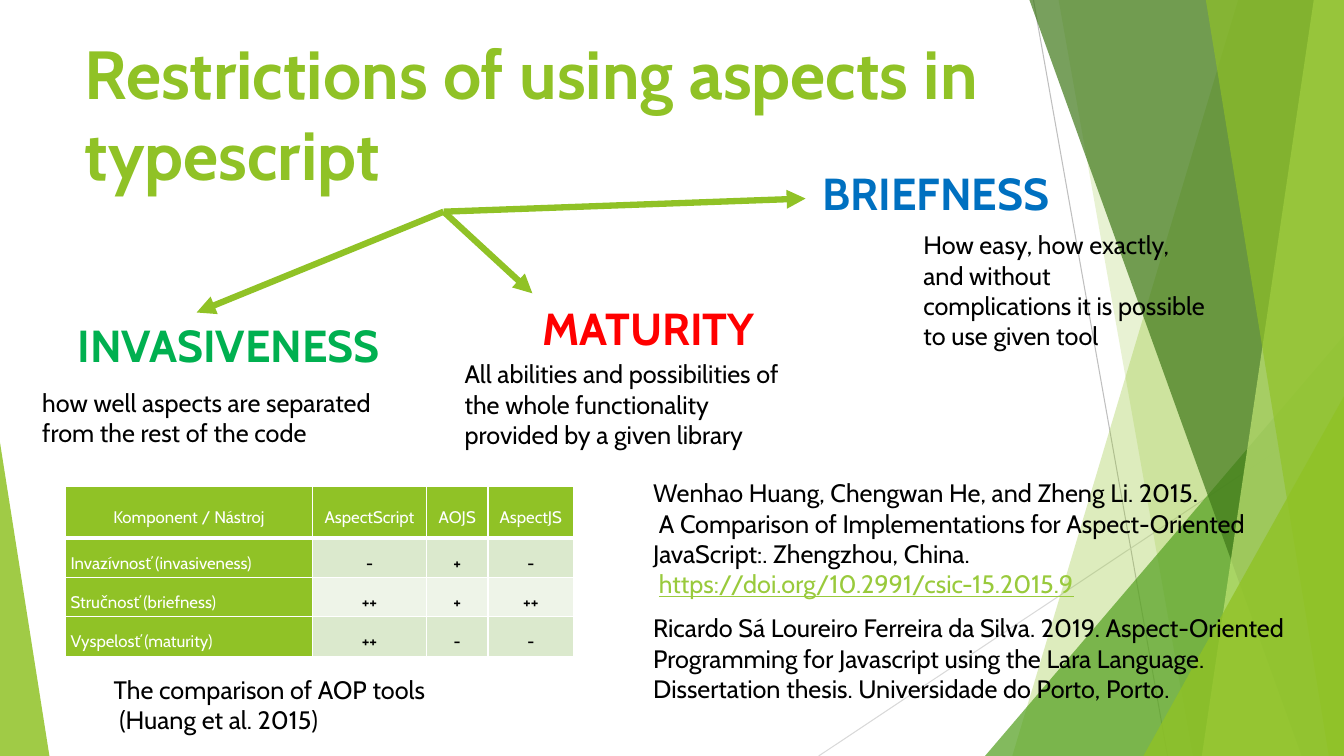
from lxml import etree
from pptx import Presentation
from pptx.dml.color import RGBColor
from pptx.enum.shapes import MSO_CONNECTOR, MSO_SHAPE
from pptx.enum.text import MSO_ANCHOR, MSO_AUTO_SIZE, PP_ALIGN
from pptx.oxml.ns import qn
from pptx.util import Inches, Pt

STRAIGHT = MSO_CONNECTOR.STRAIGHT
TRIANGLE = MSO_SHAPE.ISOSCELES_TRIANGLE
TOP, MIDDLE = MSO_ANCHOR.TOP, MSO_ANCHOR.MIDDLE
FIT_SHAPE, NO_FIT = MSO_AUTO_SIZE.SHAPE_TO_FIT_TEXT, MSO_AUTO_SIZE.NONE
LEFT, CENTER = PP_ALIGN.LEFT, PP_ALIGN.CENTER
FONT = "Cabin"
SLIDE_W, SLIDE_H = 13.33, 7.5
COLORS = {
    "lime": "90C226", "green": "54A021", "dark": "3F7819", "pale": "C0E474",
    "link": "99CA3C", "red": "FF0000", "emerald": "00B050", "blue": "0070C0",
    "black": "000000", "white": "FFFFFF", "gray": "BFBFBF", "silver": "D9D9D9",
    "band1": "DBE9CD", "band2": "EEF4E8",
}


def rgb(name):
    return RGBColor.from_string(COLORS[name])


def inches(*values):
    return [Inches(v) for v in values]


def add_run(p, text, size=18, color="black", bold=False, underline=False):
    r = p.add_run()
    r.text = text
    r.font.name, r.font.size = FONT, Pt(size)
    r.font.bold, r.font.underline = bold, underline
    r.font.color.rgb = rgb(color)


def write(tf, lines, align=LEFT, **fmt):
    """Put one paragraph per line into a text frame."""
    for i, line in enumerate(lines):
        p = tf.add_paragraph() if i else tf.paragraphs[0]
        p.alignment = align
        add_run(p, line, **fmt)


def add_text(shapes, box, lines, wrap=False, fit=FIT_SHAPE, **fmt):
    tf = shapes.add_textbox(*inches(*box)).text_frame
    write(tf, lines, **fmt)
    tf.word_wrap, tf.auto_size = wrap, fit
    return tf


def add_line(shapes, start, end, color, width, arrow=False):
    line = shapes.add_connector(STRAIGHT, *inches(*start, *end))
    line.line.color.rgb = rgb(color)
    line.line.width = Pt(width)
    if arrow:
        etree.SubElement(line.line._get_or_add_ln(), qn("a:tailEnd"), type="triangle")
    etree.SubElement(line._element.spPr, qn("a:effectLst"))


def paint(sp, color, opacity):
    sp.shadow.inherit = False
    sp.line.fill.background()
    sp.fill.solid()
    sp.fill.fore_color.rgb = rgb(color)
    clr = sp._element.spPr.find(qn("a:solidFill"))[0]
    etree.SubElement(clr, qn("a:alpha"), val=str(opacity * 1000))


def add_facet(shapes, top_x, bottom_x, color, opacity):
    """Fill the area from a slanted left edge to the right slide edge."""
    builder = shapes.build_freeform(*inches(top_x, 0))
    corners = [(SLIDE_W, 0), (SLIDE_W, SLIDE_H), (bottom_x, SLIDE_H)]
    builder.add_line_segments([inches(*c) for c in corners])
    paint(builder.convert_to_shape(), color, opacity)


def add_wedge(shapes, left, top, width, apex, color, opacity):
    """Triangle standing on the bottom slide edge, apex from 0 (left) to 1 (right)."""
    sp = shapes.add_shape(TRIANGLE, *inches(left, top, width, SLIDE_H - top))
    sp.adjustments[0] = apex
    paint(sp, color, opacity)


def add_decoration(shapes):
    add_line(shapes, (10.25, 0), (11.58, SLIDE_H), "gray", 0.75)
    add_line(shapes, (SLIDE_W, 4.03), (8.12, SLIDE_H), "silver", 0.75)
    add_facet(shapes, 12.28, 10.04, "lime", 30)
    add_facet(shapes, 10.5, 11.83, "lime", 20)
    add_wedge(shapes, 9.77, 3.33, 3.56, 1, "green", 72)
    add_facet(shapes, 10.21, 12.91, "dark", 70)
    add_facet(shapes, 13.03, 11.92, "pale", 70)
    add_facet(shapes, 11.96, 13.18, "lime", 65)
    add_wedge(shapes, 11.34, 3.93, 1.99, 1, "lime", 80)
    add_wedge(shapes, 0, 4.39, 0.49, 0, "lime", 85)


def set_borders(cell, bottom):
    tc_pr = cell._tc.get_or_add_tcPr()
    for side, width in (("L", 1), ("R", 1), ("T", 1), ("B", bottom)):
        ln = etree.SubElement(tc_pr, qn(f"a:ln{side}"), w=str(Pt(width)))
        fill = etree.SubElement(ln, qn("a:solidFill"))
        etree.SubElement(fill, qn("a:srgbClr"), val=COLORS["white"])


def add_comparison(shapes):
    rows = [
        ["Komponent / Nástroj", "AspectScript", "AOJS", "AspectJS"],
        ["Invazívnosť (invasiveness)", "-", "+", "-"],
        ["Stručnosť (briefness)", "++", "+", "++"],
        ["Vyspelosť (maturity)", "++", "-", "-"],
    ]
    table = shapes.add_table(4, 4, *inches(0.65, 4.83, 5.04, 1.68)).table
    for col, width in zip(table.columns, (2.45, 1.13, 0.61, 0.85)):
        col.width = Inches(width)
    for row, height in zip(table.rows, (0.51, 0.39, 0.39, 0.39)):
        row.height = Inches(height)
    for i, texts in enumerate(rows):
        for j, text in enumerate(texts):
            cell = table.cell(i, j)
            heading = i == 0 or j == 0
            set_borders(cell, 1 if i else 3)
            cell.fill.solid()
            cell.fill.fore_color.rgb = rgb("lime" if heading else "band1" if i % 2 else "band2")
            cell.vertical_anchor = MIDDLE
            cell.margin_left = cell.margin_right = Inches(0.05)
            cell.margin_top = cell.margin_bottom = 0
            write(cell.text_frame, [text], align=LEFT if i and not j else CENTER, size=12,
                  color="white" if heading else "black", bold=not heading)
            p = cell.text_frame.paragraphs[0]
            p.line_spacing, p.space_before = 1.5, Pt(3)


def add_title(slide):
    title = slide.shapes.title
    title.left, title.top, title.width, title.height = inches(0.74, 0.26, 9.4, 1.44)
    tf = title.text_frame
    write(tf, ["Restrictions of using aspects in typescript"], size=48.6, color="lime", bold=True)
    tf.word_wrap, tf.auto_size, tf.vertical_anchor = True, NO_FIT, TOP
    slide.shapes._spTree.append(title._element)


def main():
    prs = Presentation()
    prs.slide_width, prs.slide_height = inches(SLIDE_W, SLIDE_H)
    slide = prs.slides.add_slide(prs.slide_layouts[5])
    shapes = slide.shapes
    add_decoration(shapes.add_group_shape().shapes)
    add_title(slide)

    criteria = [
        ("MATURITY", "red", (5.28, 2.93, 3.21, 1.44), (5.28, 2.91), (4.51, 3.51, 3.74, 1.01),
         ["All abilities and possibilities of", "the whole functionality",
          "provided by a given library"]),
        ("INVASIVENESS", "emerald", (0.67, 3.1, 3.27, 1.44), (1.95, 3.1), (0.32, 3.79, 3.85, 0.71),
         ["how well aspects are separated", "from the rest of the code"]),
        ("BRIEFNESS", "blue", (8.06, 1.59, 3.96, 1.44), (7.99, 1.97), (9.06, 2.23, 3.31, 1.31),
         ["How easy, how exactly,", "and without", "complications it is possible",
          "to use given tool"]),
    ]
    for name, color, name_box, arrow_end, text_box, lines in criteria:
        add_text(shapes, name_box, [name], wrap=True, fit=NO_FIT, size=32, color=color, bold=True)
        add_line(shapes, (4.4, 2.1), arrow_end, "lime", 4.5, arrow=True)
        add_text(shapes, text_box, lines)

    add_text(shapes, (6.38, 6.03, 6.67, 1.01), [
        "Ricardo Sá Loureiro Ferreira da Silva. 2019. Aspect-Oriented Programming for Javascript "
        "using the Lara Language. Dissertation thesis. Universidade do Porto, Porto."], wrap=True)
    tf = add_text(shapes, (6.38, 4.69, 6.45, 1.31), [
        "Wenhao Huang, Chengwan He, and Zheng Li. 2015.",
        " A Comparison of Implementations for Aspect-Oriented",
        "JavaScript:. Zhengzhou, China.", " "])
    add_run(tf.paragraphs[-1], "https://doi.org/10.2991/csic-15.2015.9", color="link", underline=True)

    add_comparison(shapes)
    add_text(shapes, (1.03, 6.64, 3.43, 0.71), ["The comparison of AOP tools", " (Huang et al. 2015)"])
    prs.save("out.pptx")


if __name__ == "__main__":
    main()
